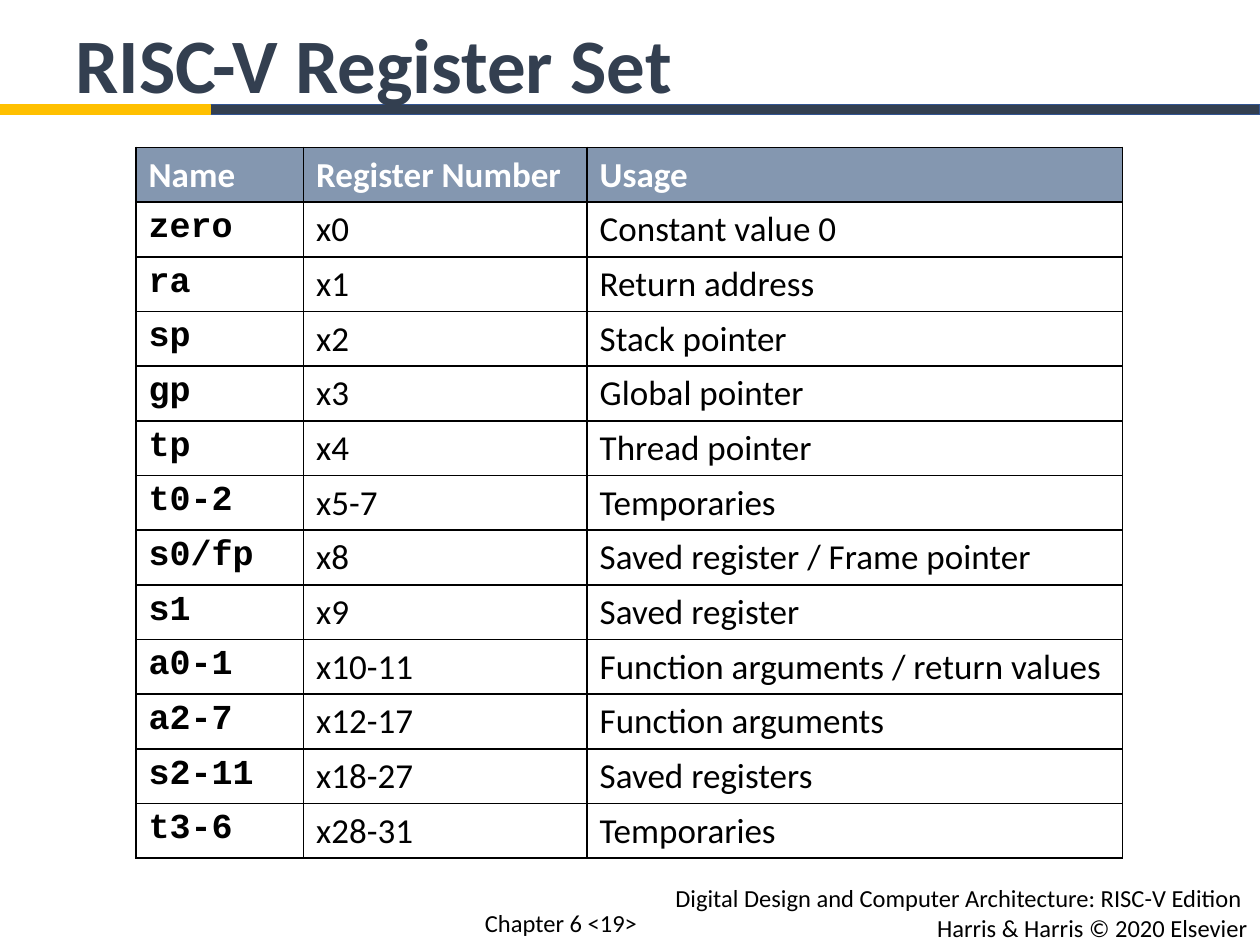
"""Build the slide that lists the RISC-V register set."""
from dataclasses import dataclass

from lxml.etree import SubElement
from pptx import Presentation
from pptx.dml.color import RGBColor
from pptx.enum.shapes import MSO_SHAPE
from pptx.enum.text import MSO_ANCHOR, MSO_AUTO_SIZE, PP_ALIGN
from pptx.oxml.ns import qn
from pptx.util import Inches, Pt

NAVY, GOLD, STEEL = "333F50", "FFC000", "8497B0"
SANS, MONO = "Calibri", "Courier New"


@dataclass
class Bar:
    """A colored strip under the title."""
    left: float
    width: float
    fill: str
    edge: str


@dataclass
class Note:
    """A footer text box."""
    left: float
    top: float
    width: float
    height: float
    lines: list[str]
    align: PP_ALIGN


@dataclass
class Reg:
    """A row of the register table."""
    name: str
    number: str
    usage: str


BARS = [Bar(1.67, 8.33, NAVY, "325491"), Bar(0, 1.67, GOLD, GOLD)]
NOTES = [
    Note(3.75, 6.96, 6.25, 0.57,
         ["Digital Design and Computer Architecture: RISC-V Edition ",
          "Harris & Harris © 2020 Elsevier"], PP_ALIGN.RIGHT),
    Note(3.75, 7.16, 1.58, 0.34, ["Chapter 6 <19>"], PP_ALIGN.LEFT),
]
HEAD = Reg("Name", "Register Number", "Usage")
REGS = [
    Reg("zero", "x0", "Constant value 0"),
    Reg("ra", "x1", "Return address"),
    Reg("sp", "x2", "Stack pointer"),
    Reg("gp", "x3", "Global pointer"),
    Reg("tp", "x4", "Thread pointer"),
    Reg("t0-2", "x5-7", "Temporaries"),
    Reg("s0/fp", "x8", "Saved register / Frame pointer"),
    Reg("s1", "x9", "Saved register"),
    Reg("a0-1", "x10-11", "Function arguments / return values"),
    Reg("a2-7", "x12-17", "Function arguments"),
    Reg("s2-11", "x18-27", "Saved registers"),
    Reg("t3-6", "x28-31", "Temporaries"),
]
WIDTHS = [1.33, 2.25, 4.25]
ROW = 0.43


def color(code: str) -> RGBColor:
    """Turn a hex string into a color."""
    return RGBColor.from_string(code)


def write(frame, lines: list[str], *, size: float, ink: str = "000000",
          font: str = SANS, bold: bool = False, align=PP_ALIGN.LEFT,
          margin: float = 0, indent: float = 0) -> None:
    """Fill a text frame with formatted paragraphs."""
    frame.text = "\n".join(lines)
    for para in frame.paragraphs:
        para.alignment = align
        props = para._p.get_or_add_pPr()
        props.set("marL", str(Inches(margin)))
        props.set("indent", str(Inches(indent)))
        for run in para.runs:
            run.font.name = font
            run.font.size = Pt(size)
            run.font.bold = bold
            run.font.color.rgb = color(ink)


def draw_bar(slide, bar: Bar) -> None:
    """Draw one strip."""
    shape = slide.shapes.add_shape(
        MSO_SHAPE.RECTANGLE, Inches(bar.left), Inches(0.83),
        Inches(bar.width), Inches(0.08))
    shape.shadow.inherit = False
    shape.fill.solid()
    shape.fill.fore_color.rgb = color(bar.fill)
    shape.line.color.rgb = color(bar.edge)
    shape.line.width = Pt(1)


def draw_note(slide, note: Note) -> None:
    """Draw one footer text."""
    box = slide.shapes.add_textbox(Inches(note.left), Inches(note.top),
                                   Inches(note.width), Inches(note.height))
    box.text_frame.word_wrap = True
    box.text_frame.auto_size = MSO_AUTO_SIZE.SHAPE_TO_FIT_TEXT
    write(box.text_frame, note.lines, size=14, align=note.align)


def edge_cell(cell) -> None:
    """Give a cell thin black borders."""
    props = cell._tc.get_or_add_tcPr()
    for side in ("a:lnL", "a:lnR", "a:lnT", "a:lnB"):
        line = SubElement(props, qn(side), w=str(Pt(1)))
        fill = SubElement(line, qn("a:solidFill"))
        SubElement(fill, qn("a:srgbClr"), val="000000")


def draw_table(slide, regs: list[Reg]) -> None:
    """Draw the register table with its header row."""
    rows = [HEAD, *regs]
    table = slide.shapes.add_table(
        len(rows), len(WIDTHS), Inches(1.08), Inches(1.17),
        Inches(sum(WIDTHS)), Inches(ROW * len(rows))).table
    table.horz_banding = False
    for col, width in zip(table.columns, WIDTHS):
        col.width = Inches(width)
    for i, reg in enumerate(rows):
        table.rows[i].height = Inches(ROW)
        for j, text in enumerate((reg.name, reg.number, reg.usage)):
            cell, head = table.cell(i, j), i == 0
            edge_cell(cell)
            if head:
                cell.fill.solid()
                cell.fill.fore_color.rgb = color(STEEL)
            else:
                cell.fill.background()
            write(cell.text_frame, [text], size=20, bold=head or j == 0,
                  ink="FFFFFF" if head else "000000",
                  font=MONO if j == 0 and not head else SANS,
                  margin=0.38, indent=-0.38)


def draw_title(slide, text: str) -> None:
    """Place the title in front of the strips."""
    title = slide.shapes.title
    title.left, title.top = Inches(0), Inches(0.08)
    title.width, title.height = Inches(8.67), Inches(0.84)
    frame = title.text_frame
    frame.word_wrap = True
    frame.auto_size = MSO_AUTO_SIZE.SHAPE_TO_FIT_TEXT
    frame.vertical_anchor = MSO_ANCHOR.TOP
    write(frame, [text], size=44, ink=NAVY, bold=True, margin=0.5)
    title.element.getparent().append(title.element)


def main() -> None:
    """Build and save the deck."""
    deck = Presentation()
    deck.slide_width, deck.slide_height = Inches(10), Inches(7.5)
    slide = deck.slides.add_slide(deck.slide_layouts[5])
    for note in NOTES:
        draw_note(slide, note)
    for bar in BARS:
        draw_bar(slide, bar)
    draw_table(slide, REGS)
    draw_title(slide, "RISC-V Register Set")
    deck.save("out.pptx")


if __name__ == "__main__":
    main()
